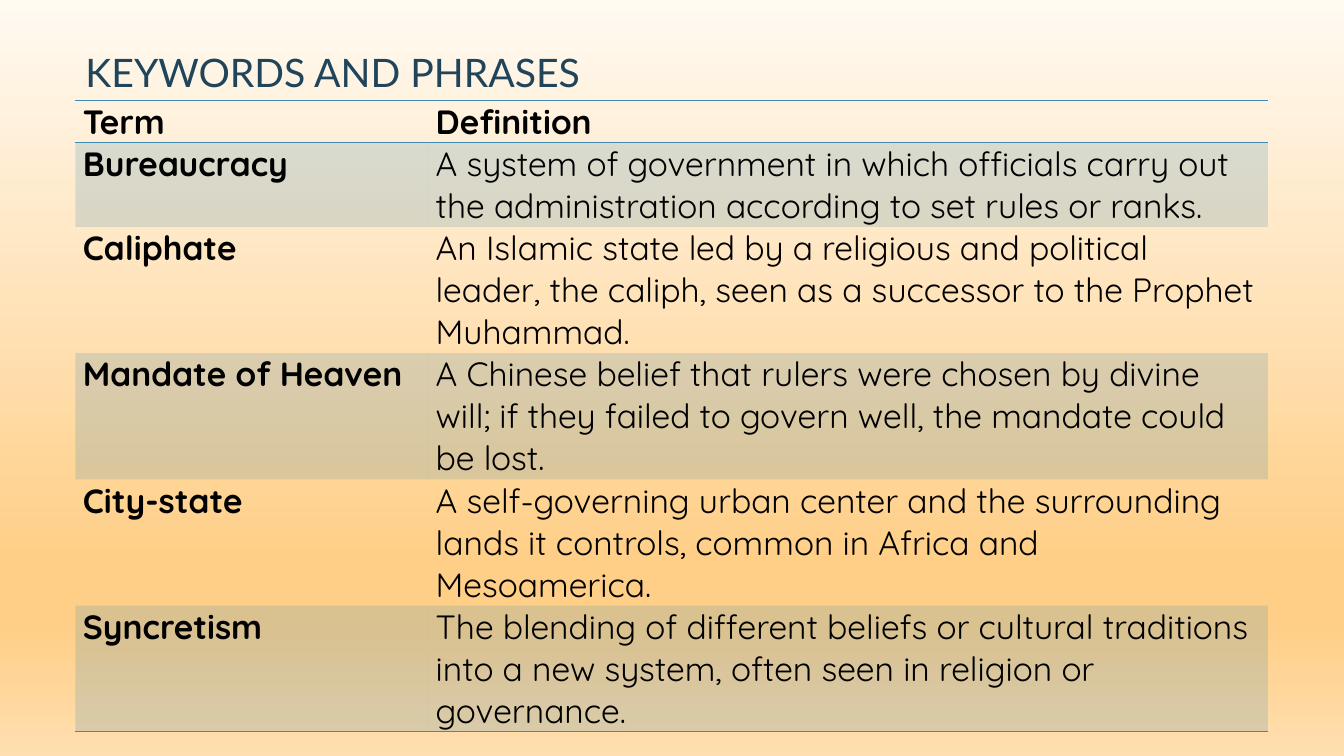
from lxml import etree
from pptx import Presentation
from pptx import util as u
from pptx.dml.color import RGBColor
from pptx.enum import text
from pptx.oxml.ns import qn

COLOURS = {"title": "20455A", "body": "000000", "accent": "418AB3"}
BACKDROP = [(0, "FFFAF2"), (74, "FFCF88"), (83, "FFCF88"), (100, "FFDFB0")]
PLAIN_TABLE = "{2D5ABB26-0587-4C30-8999-92F81FD0307C}"
LEFT, TABLE_TOP, LINE_HEIGHT = 1.9, 2.54, 1.06
COLUMN_WIDTHS = [8.89, 21.16]

# Each entry: term, definition, number of text lines
GLOSSARY = [
    ("Term", "Definition", 1),
    ("Bureaucracy", "A system of government in which officials carry out the "
     "administration according to set rules or ranks.", 2),
    ("Caliphate", "An Islamic state led by a religious and political leader, "
     "the caliph, seen as a successor to the Prophet Muhammad.", 3),
    ("Mandate of Heaven", "A Chinese belief that rulers were chosen by divine "
     "will; if they failed to govern well, the mandate could be lost.", 3),
    ("City-state", "A self-governing urban center and the surrounding lands "
     "it controls, common in Africa and Mesoamerica.", 3),
    ("Syncretism", "The blending of different beliefs or cultural traditions "
     "into a new system, often seen in religion or governance.", 3),
]


def add_node(parent, tag, **attributes):
    return etree.SubElement(parent, qn(tag), attributes)


class GlossarySlide:
    def __init__(self, deck):
        self.slide = deck.slides.add_slide(deck.slide_layouts[5])

    def backdrop(self, stops):
        fill = self.slide.background.fill
        fill.gradient()
        fill.gradient_angle = 270
        stop_list = self.slide.element.find(".//" + qn("a:gsLst"))
        for default_stop in list(stop_list):
            stop_list.remove(default_stop)
        for percent, colour in stops:
            stop = add_node(stop_list, "a:gs", pos=str(percent * 1000))
            add_node(stop, "a:srgbClr", val=colour)

    def add_words(self, paragraph, words, font_name, size, colour, bold=False):
        run = paragraph.add_run()
        run.text = words
        run.font.name = font_name
        run.font.size = u.Pt(size)
        run.font.bold = bold
        run.font.color.rgb = RGBColor.from_string(COLOURS[colour])

    def title(self, words):
        heading = self.slide.shapes.title
        heading.left, heading.top = u.Cm(LEFT), u.Cm(0.56)
        heading.width, heading.height = u.Cm(27.1), u.Cm(1.98)
        frame = heading.text_frame
        frame.auto_size = text.MSO_AUTO_SIZE.NONE
        frame.word_wrap = True
        frame.vertical_anchor = text.MSO_ANCHOR.BOTTOM
        paragraph = frame.paragraphs[0]
        paragraph.alignment = text.PP_ALIGN.LEFT
        paragraph.line_spacing = 0.9
        self.add_words(paragraph, words, "Lato", 28, "title")

    def glossary(self, entries):
        line_total = sum(lines for _, _, lines in entries)
        frame = self.slide.shapes.add_table(
            len(entries), len(COLUMN_WIDTHS), u.Cm(LEFT), u.Cm(TABLE_TOP),
            u.Cm(sum(COLUMN_WIDTHS)), u.Cm(line_total * LINE_HEIGHT))
        table = frame.table
        frame.element.find(".//" + qn("a:tableStyleId")).text = PLAIN_TABLE
        for column, width in zip(table.columns, COLUMN_WIDTHS):
            column.width = u.Cm(width)
        last = len(entries) - 1
        for row, (term, definition, lines) in enumerate(entries):
            table.rows[row].height = u.Cm(lines * LINE_HEIGHT)
            edges = {0: ["a:lnT", "a:lnB"], last: ["a:lnB"]}.get(row, [])
            for column, words in enumerate((term, definition)):
                cell = table.cell(row, column)
                self.cell(cell, words, bold=row == 0 or column == 0)
                self.shade(cell, banded=row % 2 == 1)
                self.rule(cell, edges)

    def cell(self, cell, words, bold):
        cell.margin_left = cell.margin_right = u.Cm(0.19)
        cell.margin_top = cell.margin_bottom = 0
        self.add_words(cell.text_frame.paragraphs[0], words, "Quicksand", 24,
                       "body", bold)

    def shade(self, cell, banded):
        if not banded:
            cell.fill.background()
            return
        cell.fill.solid()
        cell.fill.fore_color.rgb = RGBColor.from_string(COLOURS["accent"])
        properties = cell._tc.get_or_add_tcPr()
        tint = properties.find(".//" + qn("a:srgbClr"))
        add_node(tint, "a:alpha", val="20000")

    def rule(self, cell, edges):
        """Draw 1 pt lines on the given edges; they must precede the fill."""
        properties = cell._tc.get_or_add_tcPr()
        for position, edge in enumerate(edges):
            line = etree.Element(qn(edge), w=str(u.Pt(1)))
            solid = add_node(line, "a:solidFill")
            add_node(solid, "a:srgbClr", val=COLOURS["accent"])
            properties.insert(position, line)


def main():
    deck = Presentation()
    deck.slide_width, deck.slide_height = u.Cm(33.87), u.Cm(19.05)
    page = GlossarySlide(deck)
    page.backdrop(BACKDROP)
    page.title("KEYWORDS AND PHRASES")
    page.glossary(GLOSSARY)
    deck.save("out.pptx")


if __name__ == "__main__":
    main()
